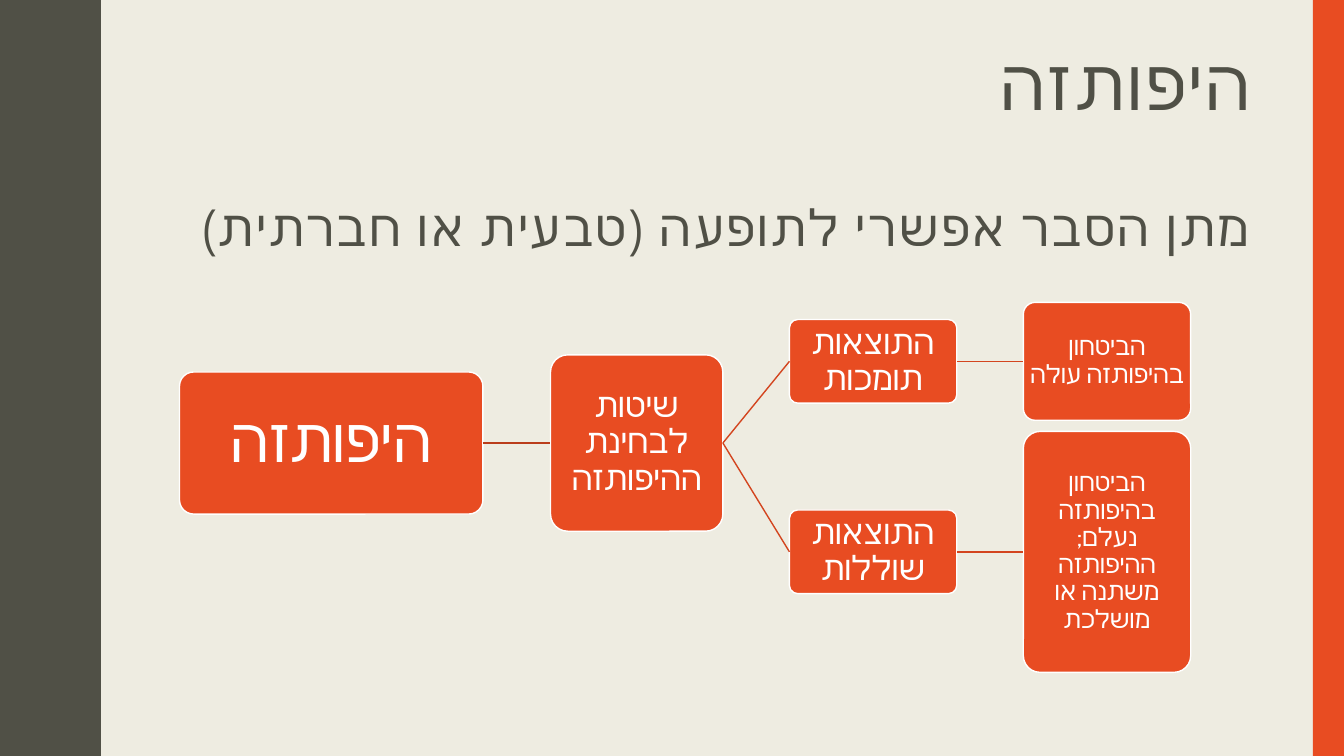
from dataclasses import dataclass

from lxml.etree import SubElement
from pptx import Presentation
from pptx.dml.color import RGBColor as RGB
from pptx.enum.shapes import MSO_CONNECTOR as CONN, MSO_SHAPE as SHAPE
from pptx.enum.text import MSO_ANCHOR as ANCHOR, MSO_AUTO_SIZE as FIT, PP_ALIGN as ALIGN
from pptx.oxml.ns import qn
from pptx.util import Inches, Pt


@dataclass(frozen=True)
class Theme:
    paper: RGB = RGB.from_string("EEECE1")
    dark: RGB = RGB.from_string("505046")
    accent: RGB = RGB.from_string("E84C22")
    trunk: RGB = RGB.from_string("BA3D1B")
    branch: RGB = RGB.from_string("D3451F")
    white: RGB = RGB.from_string("FFFFFF")
    title_font: str = "Arial Narrow"
    box_font: str = "Cabin"
    title: int = 51
    subtitle: int = 36
    root: int = 44
    step: int = 24
    leaf: int = 18


THEME = Theme()
WIDTH, HEIGHT = 13.33, 7.5
WAVE = 1.5  # height of one full wave on the left edge
RISE = [(0.78, 0), (0.78, 0.07), (0.79, 0.14), (0.8, 0.2), (0.81, 0.25),
        (0.83, 0.29), (0.85, 0.33), (0.87, 0.38), (0.89, 0.42), (0.91, 0.46),
        (0.93, 0.5), (0.95, 0.55), (0.96, 0.61), (0.97, 0.68)]

# name: text, left, top, width, height, type size, inset
BOXES = {
    "hypothesis": ("היפותזה", 1.78, 3.69, 3.01, 1.41, THEME.root, 0.03),
    "methods": ("שיטות לבחינת ההיפותזה", 5.46, 3.52, 1.71, 1.75, THEME.step, 0.02),
    "support": ("התוצאות תומכות", 7.83, 3.17, 1.66, 0.83, THEME.step, 0.02),
    "refute": ("התוצאות שוללות", 7.83, 5.06, 1.66, 0.83, THEME.step, 0.02),
    "stronger": ("הביטחון בהיפותזה עולה", 10.15, 3, 1.66, 1.17, THEME.leaf, 0.01),
    "weaker": ("הביטחון בהיפותזה נעלם; ההיפותזה משתנה או מושלכת",
               10.15, 4.28, 1.66, 2.39, THEME.leaf, 0.01),
}
LINKS = [
    ("hypothesis", "methods", THEME.trunk),
    ("methods", "support", THEME.branch),
    ("methods", "refute", THEME.branch),
    ("support", "stronger", THEME.branch),
    ("refute", "weaker", THEME.branch),
]


def apply(target, formats):
    for name, value in formats.items():
        setattr(target, name, value)


def write(p, text, size, font, color, align):
    """Fill a right-to-left paragraph and return its run."""
    apply(p, {"alignment": align, "line_spacing": 0.9})
    p._p.get_or_add_pPr().set("rtl", "1")
    r = p.add_run()
    r.text = text
    apply(r.font, {"name": font, "size": Pt(size), "bold": False})
    r.font.color.rgb = color
    SubElement(r.font._element, qn("a:cs")).set("typeface", font)
    return r


def paint(sp, color):
    sp.shadow.inherit = False
    sp.fill.solid()
    sp.fill.fore_color.rgb = color
    sp.line.fill.background()


def add_edges(s):
    # Wavy band on the left: each wave rises, then mirrors itself
    wave = RISE + [(0.97, WAVE / 2)] + [(x, WAVE - y) for x, y in RISE[:0:-1]]
    edge = [(x, y + i * WAVE) for i in range(round(HEIGHT / WAVE)) for x, y in wave]
    outline = edge + [(0.78, HEIGHT), (0, HEIGHT)]
    builder = s.shapes.build_freeform(0, 0, scale=Inches(1))
    builder.add_line_segments(outline, close=True)
    paint(builder.convert_to_shape(), THEME.dark)
    # Straight bar on the right
    bar = s.shapes.add_shape(SHAPE.RECTANGLE, Inches(13.02), 0, Inches(0.31), Inches(HEIGHT))
    paint(bar, THEME.accent)


def add_title(s, heading, explanation):
    sp = s.shapes.title
    apply(sp, {"left": Inches(1.37), "top": Inches(0.42),
               "width": Inches(11.13), "height": Inches(2.19)})
    tf = sp.text_frame
    apply(tf, {"word_wrap": True, "auto_size": FIT.NONE, "vertical_anchor": ANCHOR.MIDDLE})
    lines = [(tf.paragraphs[0], heading, THEME.title, 0),
             (tf.add_paragraph(), explanation, THEME.subtitle, 55)]
    for p, text, size, gap in lines:
        r = write(p, text, size, THEME.title_font, THEME.dark, ALIGN.RIGHT)
        r.font._element.set("spc", "200")
        p.space_before = Pt(gap)


def add_box(s, text, left, top, width, height, size, inset):
    sp = s.shapes.add_shape(SHAPE.ROUNDED_RECTANGLE, Inches(left), Inches(top),
                            Inches(width), Inches(height))
    sp.adjustments[0] = 0.1
    paint(sp, THEME.accent)
    sp.line.color.rgb = THEME.white
    sp.line.width = Pt(1)
    tf = sp.text_frame
    apply(tf, {"word_wrap": True, "vertical_anchor": ANCHOR.MIDDLE})
    apply(tf, {f"margin_{side}": Inches(inset) for side in ("left", "top", "right", "bottom")})
    write(tf.paragraphs[0], text, size, THEME.box_font, THEME.white, ALIGN.CENTER)
    return sp


def add_link(s, start, end, color):
    link = s.shapes.add_connector(CONN.STRAIGHT, 0, 0, 0, 0)
    link.begin_connect(start, 3)
    link.end_connect(end, 1)
    link.line.color.rgb = color
    link.line.width = Pt(1)
    SubElement(link._element.spPr, qn("a:effectLst"))


def main():
    prs = Presentation()
    apply(prs, {"slide_width": Inches(WIDTH), "slide_height": Inches(HEIGHT)})
    s = prs.slides.add_slide(prs.slide_layouts[5])
    s.background.fill.solid()
    s.background.fill.fore_color.rgb = THEME.paper

    add_edges(s)
    add_title(s, "היפותזה", "מתן הסבר אפשרי לתופעה (טבעית או חברתית)")

    # Decision tree
    boxes = {name: add_box(s, *values) for name, values in BOXES.items()}
    for start, end, color in LINKS:
        add_link(s, boxes[start], boxes[end], color)

    prs.save("out.pptx")


if __name__ == "__main__":
    main()
